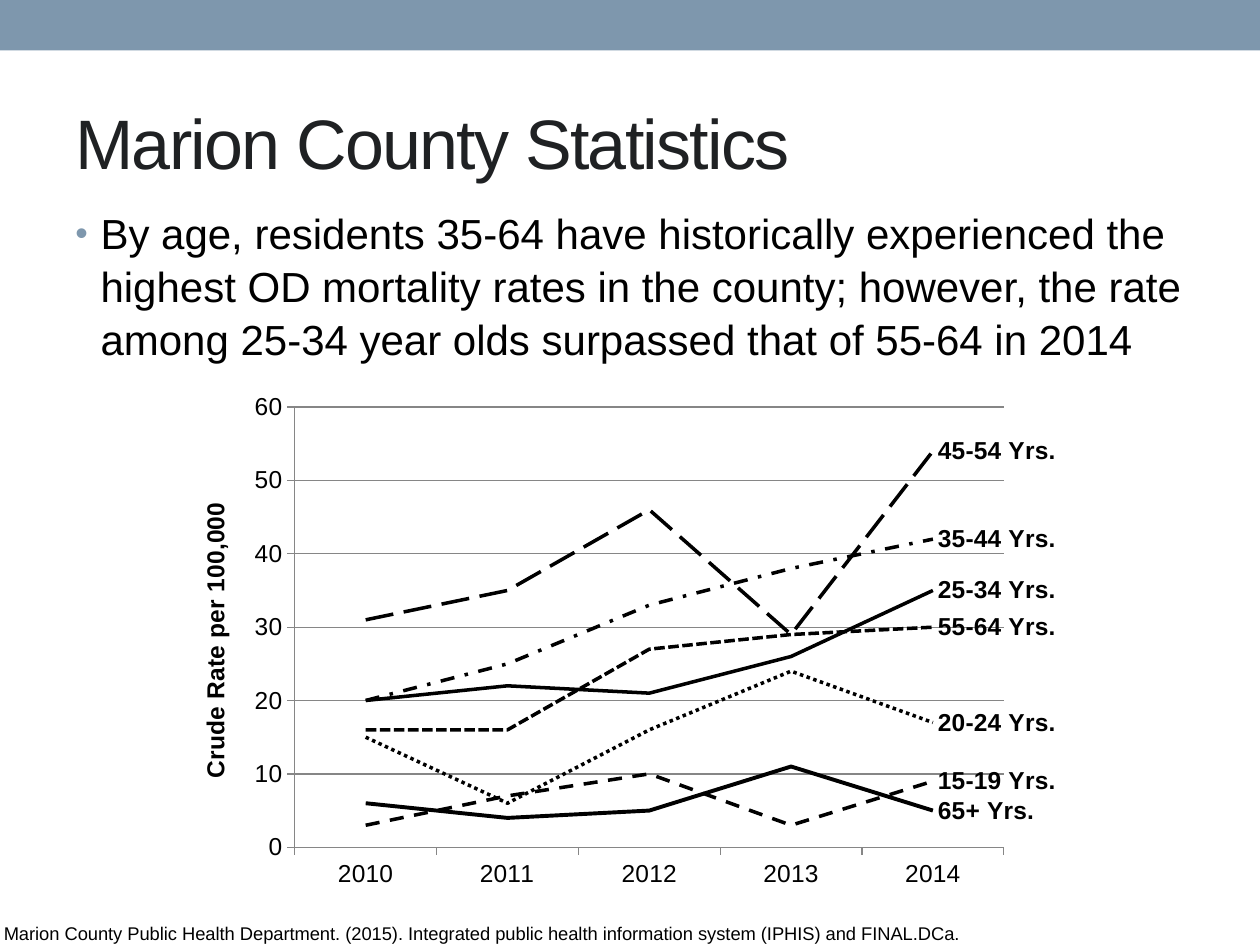
from lxml import etree
from pptx import Presentation
from pptx.chart.data import CategoryChartData
from pptx.dml.color import RGBColor
from pptx.enum.chart import XL_CHART_TYPE, XL_LABEL_POSITION, XL_MARKER_STYLE, XL_TICK_MARK
from pptx.enum.dml import MSO_LINE
from pptx.enum.shapes import MSO_SHAPE
from pptx.enum.text import MSO_ANCHOR
from pptx.oxml import parse_xml
from pptx.oxml.ns import nsdecls, qn
from pptx.util import Inches, Pt

LINE_CHART = XL_CHART_TYPE.LINE
RIGHT = XL_LABEL_POSITION.RIGHT
NO_MARKER = XL_MARKER_STYLE.NONE
OUTSIDE = XL_TICK_MARK.OUTSIDE
RECTANGLE = MSO_SHAPE.RECTANGLE
TOP, MIDDLE = MSO_ANCHOR.TOP, MSO_ANCHOR.MIDDLE
FONT = "Arial"
COLORS = {"band": "7E97AD", "title": "1F2123", "text": "000000", "grid": "868686"}


def color(name):
    return RGBColor.from_string(COLORS[name])


def add_text(text, left, top, width, height, size, fill="text", anchor=TOP, inset=(0.1, 0.05)):
    box = slide.shapes.add_textbox(Inches(left), Inches(top), Inches(width), Inches(height))
    frame = box.text_frame
    frame.word_wrap = True
    frame.vertical_anchor = anchor
    frame.margin_left = frame.margin_right = Inches(inset[0])
    frame.margin_top = frame.margin_bottom = Inches(inset[1])
    paragraph = frame.paragraphs[0]
    run = paragraph.add_run()
    run.text = text
    run.font.name = FONT
    run.font.size = Pt(size)
    run.font.color.rgb = color(fill)
    return paragraph


presentation = Presentation()
presentation.slide_width = Inches(10)
presentation.slide_height = Inches(7.5)
slide = presentation.slides.add_slide(presentation.slide_layouts[6])

band = slide.shapes.add_shape(RECTANGLE, 0, 0, Inches(10), Inches(0.4))
band.shadow.inherit = False
band.fill.solid()
band.fill.fore_color.rgb = color("band")
band.line.fill.background()

title = add_text("Marion County Statistics", 0.5, 0.58, 7.92, 1.08, 40, fill="title", anchor=MIDDLE)
title.runs[0].font._element.set("spc", "-100")

body = add_text(
    "By age, residents 35-64 have historically experienced the highest OD mortality rates "
    "in the county; however, the rate among 25-34 year olds surpassed that of 55-64 in 2014",
    0.5, 1.58, 9, 1.4, 24)
body.line_spacing = 1.05
body.space_after = Pt(6)
properties = body._p.get_or_add_pPr()
properties.set("marL", str(Inches(0.2)))
properties.set("indent", str(-Inches(0.2)))
bullet_color = etree.SubElement(properties, qn("a:buClr"))
etree.SubElement(bullet_color, qn("a:srgbClr"), val=COLORS["band"])
etree.SubElement(properties, qn("a:buSzPct"), val="85000")
etree.SubElement(properties, qn("a:buFont"), typeface=FONT)
etree.SubElement(properties, qn("a:buChar"), char="•")

add_text(
    "Marion County Public Health Department. (2015). Integrated public health information "
    "system (IPHIS) and FINAL.DCa.", 0.03, 7.32, 9.89, 0.18, 10.5, inset=(0, 0))

age_groups = [
    ("15-19 Yrs.", (3, 7, 10, 3, 9), MSO_LINE.DASH, 2),
    ("20-24 Yrs.", (15, 6, 16, 24, 17), MSO_LINE.ROUND_DOT, 2),
    ("25-34 Yrs.", (20, 22, 21, 26, 35), MSO_LINE.SOLID, 2),
    ("35-44 Yrs.", (20, 25, 33, 38, 42), MSO_LINE.DASH_DOT, 2),
    ("45-54 Yrs.", (31, 35, 46, 29, 54), MSO_LINE.LONG_DASH, 2),
    ("55-64 Yrs.", (16, 16, 27, 29, 30), MSO_LINE.SQUARE_DOT, 2),
    ("65+ Yrs.", (6, 4, 5, 11, 5), MSO_LINE.SOLID, 2.25),
]
preset_dashes = {MSO_LINE.ROUND_DOT: "sysDot", MSO_LINE.SQUARE_DOT: "sysDash"}
chart_data = CategoryChartData()
chart_data.categories = ["2010", "2011", "2012", "2013", "2014"]
for name, rates, dash, weight in age_groups:
    chart_data.add_series(name, rates)

chart = slide.shapes.add_chart(
    LINE_CHART, Inches(1.5), Inches(3), Inches(7), Inches(4.2), chart_data).chart
chart.has_legend = False
chart.has_title = False
chart.font.name = FONT
chart.font.size = Pt(12)
chart.font.color.rgb = color("text")

for series, (name, rates, dash, weight) in zip(chart.plots[0].series, age_groups):
    series.smooth = False
    series.marker.style = NO_MARKER
    series.format.line.color.rgb = color("text")
    series.format.line.width = Pt(weight)
    series.format.line.dash_style = dash
    if dash in preset_dashes:
        series._element.find(".//" + qn("a:prstDash")).set("val", preset_dashes[dash])
    label = series.points[len(rates) - 1].data_label
    label.position = RIGHT
    label.font.name = FONT
    label.font.size = Pt(14)
    label.font.bold = True
    label.font.color.rgb = color("text")
    label_element = series._element.find(".//" + qn("c:dLbl"))
    label_element.find(qn("c:showVal")).set("val", "0")
    label_element.find(qn("c:showSerName")).set("val", "1")

value_axis = chart.value_axis
for axis in (chart.category_axis, value_axis):
    axis.major_tick_mark = OUTSIDE
    axis.tick_labels.font.size = Pt(14)
    axis.tick_labels.font.name = FONT
    axis.tick_labels.font.color.rgb = color("text")
    axis.format.line.color.rgb = color("grid")
    axis.format.line.width = Pt(0.75)
value_axis.minimum_scale = 0
value_axis.maximum_scale = 60
value_axis.major_unit = 10
value_axis.tick_labels.number_format = "#,##0"
value_axis.tick_labels.number_format_is_linked = False
value_axis.has_major_gridlines = True
value_axis.major_gridlines.format.line.color.rgb = color("grid")
value_axis.major_gridlines.format.line.width = Pt(0.75)
axis_title = value_axis.axis_title.text_frame
axis_title.text = "Crude Rate per 100,000"
title_font = axis_title.paragraphs[0].runs[0].font
title_font.name = FONT
title_font.size = Pt(14)
title_font.bold = True
title_font.color.rgb = color("text")

plot_area = chart._chartSpace.find(".//" + qn("c:plotArea"))
for layout in plot_area.findall(qn("c:layout")):
    plot_area.remove(layout)
plot_area.insert(0, parse_xml(
    f'<c:layout {nsdecls("c")}><c:manualLayout><c:layoutTarget val="inner"/>'
    '<c:xMode val="edge"/><c:yMode val="edge"/><c:x val="0.12"/><c:y val="0.055"/>'
    '<c:w val="0.804"/><c:h val="0.832"/></c:manualLayout></c:layout>'))

presentation.save("out.pptx")
